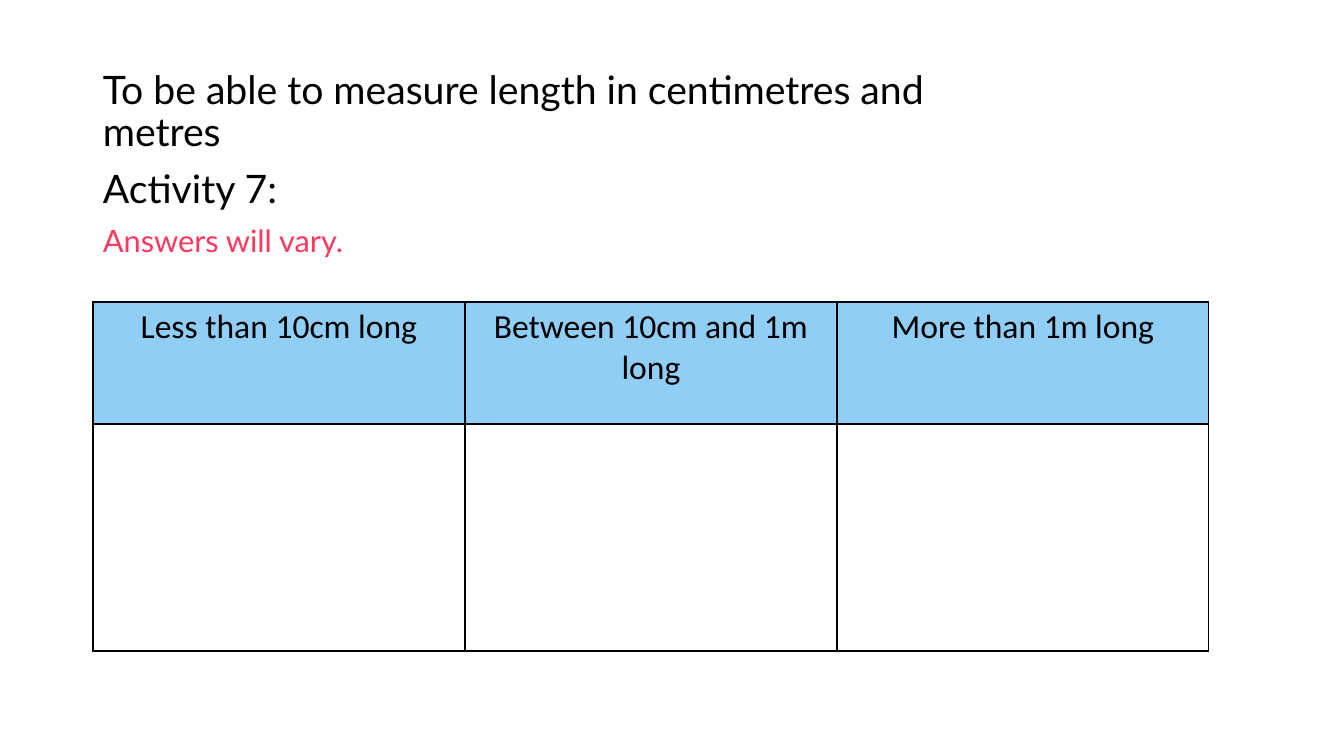
"""Build a slide with a length-sorting table for a measuring activity."""
from lxml.etree import SubElement
from pptx import Presentation
from pptx.dml.color import RGBColor
from pptx.enum.text import MSO_ANCHOR, PP_ALIGN
from pptx.oxml import parse_xml
from pptx.oxml.ns import qn
from pptx.util import Emu, Pt

BLACK = RGBColor(0, 0, 0)
WHITE = RGBColor(255, 255, 255)
PINK = RGBColor(0xFF, 0x38, 0x60)
BLUE = RGBColor(0x20, 0x9C, 0xEE)
NS = "http://schemas.openxmlformats.org/drawingml/2006/main"


def px(n):
    return Emu(round(n * 914400 / 100.8))


def add_run(para, text, size, font, color):
    run = para.add_run()
    run.text = text
    run.font.size = Pt(size)
    run.font.name = font
    run.font.color.rgb = color


deck = Presentation()
deck.slide_width, deck.slide_height = px(1344), px(756)
slide = deck.slides.add_slide(deck.slide_layouts[6])

title = slide.shapes.add_textbox(px(93), px(40), px(968), px(146)).text_frame
title.word_wrap = True
title.vertical_anchor = MSO_ANCHOR.MIDDLE
para = title.paragraphs[0]
para.line_spacing = 0.9
add_run(para, "To be able to measure length in centimetres and metres", 28, "Lato", BLACK)

body = slide.shapes.add_textbox(px(93), px(165), px(1179), px(120)).text_frame
body.word_wrap = True
para = body.paragraphs[0]
para.line_spacing = 0.9
add_run(para, "Activity 7:", 28, "Lato", BLACK)
para = body.add_paragraph()
para.line_spacing = 0.9
para.space_before = Pt(10)
add_run(para, "Answers will vary.", 22, "Lato", PINK)

heads = ["Less than 10cm long", "Between 10cm and 1m long", "More than 1m long"]
table = slide.shapes.add_table(2, 3, px(93), px(302), px(1116), px(349)).table
for row, high in zip(table.rows, (122, 227)):
    row.height = px(high)
for col, head in enumerate(heads):
    table.columns[col].width = px(372)
    para = table.cell(0, col).text_frame.paragraphs[0]
    para.alignment = PP_ALIGN.CENTER
    add_run(para, head, 24, "Calibri", BLACK)
    for row, color in enumerate((BLUE, WHITE)):
        cell = table.cell(row, col)
        cell.fill.solid()
        cell.fill.fore_color.rgb = color
        props = cell._tc.get_or_add_tcPr()
        if row == 0:
            tint = props.find(".//" + qn("a:srgbClr"))
            SubElement(tint, qn("a:alpha"), val="49000")
        for spot, side in enumerate("LRTB"):
            props.insert(spot, parse_xml(
                f'<a:ln{side} xmlns:a="{NS}" w="12700"><a:solidFill>'
                f'<a:srgbClr val="{BLACK}"/></a:solidFill></a:ln{side}>'))

deck.save("out.pptx")
